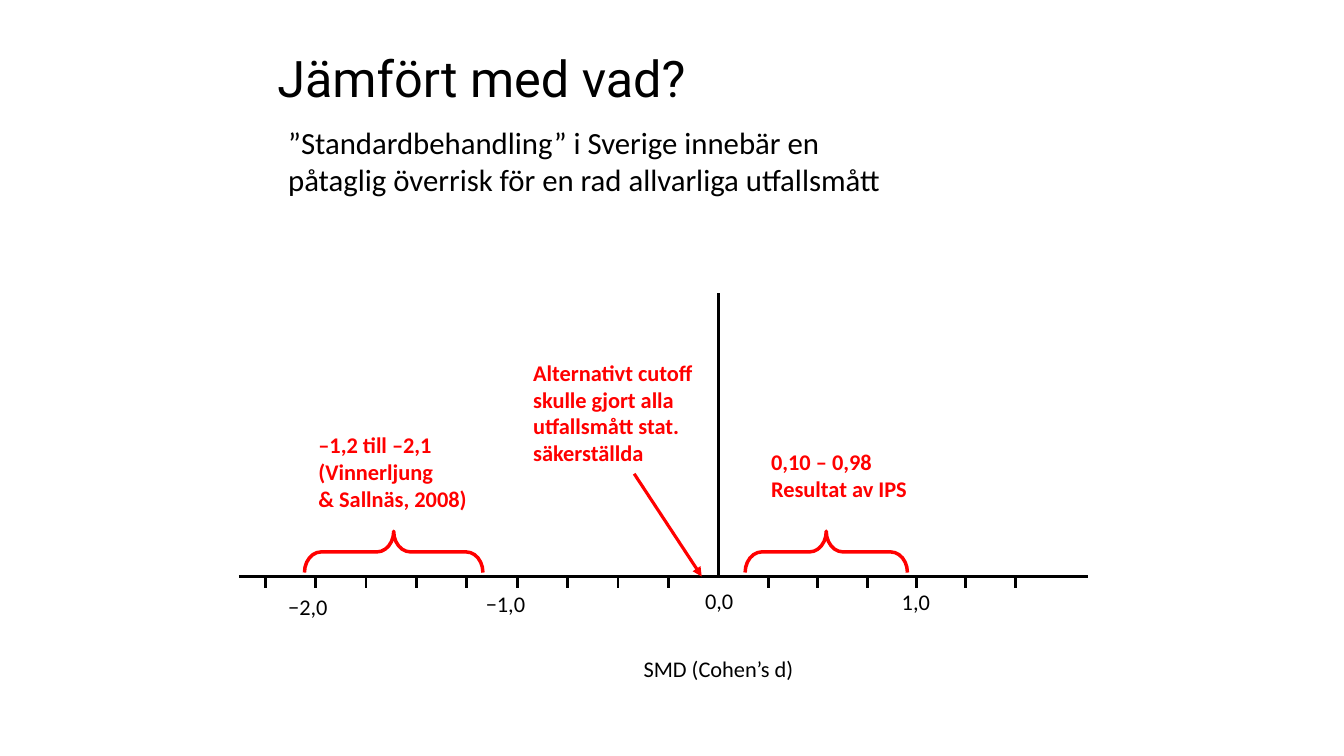
from pptx import Presentation
from pptx.dml.color import RGBColor
from pptx.enum.shapes import MSO_CONNECTOR, MSO_SHAPE
from pptx.enum.text import MSO_ANCHOR, MSO_AUTO_SIZE, PP_ALIGN
from pptx.oxml.ns import qn
from pptx.util import Inches, Pt
from lxml.etree import SubElement

BLACK, RED = "000000", "FF0000"
COLUMNS, ROWS = 133.3, 75


def cells(*counts):
    """Turn counts of tenth-inch grid cells into lengths."""
    return [Inches(count / 10) for count in counts]


def color(value):
    """Turn a hex string into a colour."""
    return RGBColor.from_string(value)


def write(frame, text, size=16, font="Calibri", ink=BLACK, bold=False,
          spacing=None, after=0):
    """Fill a text frame with one paragraph for each line of text."""
    for index, line in enumerate(text.split("\n")):
        para = frame.paragraphs[0] if index == 0 else frame.add_paragraph()
        para.alignment = PP_ALIGN.LEFT
        para.line_spacing = spacing
        para.space_after = Pt(after)
        span = para.add_run()
        span.text = line
        span.font.size = Pt(size)
        span.font.name = font
        span.font.bold = bold
        span.font.color.rgb = color(ink)


def add_text(page, box, text, wrap=True, **style):
    """Add a text box at a grid box."""
    frame = page.shapes.add_textbox(*cells(*box)).text_frame
    frame.word_wrap = wrap
    frame.auto_size = MSO_AUTO_SIZE.SHAPE_TO_FIT_TEXT
    write(frame, text, **style)


def add_line(page, start, end, ink=BLACK, width=2, arrow=False):
    """Draw a straight line between two grid points."""
    line = page.shapes.add_connector(MSO_CONNECTOR.STRAIGHT, *cells(*start, *end))
    line.line.color.rgb = color(ink)
    line.line.width = Pt(width)
    properties = line._element.spPr
    if arrow:
        SubElement(properties.find(qn("a:ln")), qn("a:tailEnd"), type="triangle")
    SubElement(properties, qn("a:effectLst"))


def add_brace(page, box):
    """Draw a brace that spans the grid box and points up."""
    left, top, width, height = box
    upright = (left + (width - height) / 2, top + (height - width) / 2, height, width)
    brace = page.shapes.add_shape(MSO_SHAPE.RIGHT_BRACE, *cells(*upright))
    brace.rotation = 270
    brace.adjustments[0] = 0.405
    brace.adjustments[1] = 0.5
    brace.fill.background()
    brace.line.color.rgb = color(RED)
    brace.line.width = Pt(2.5)
    brace.shadow.inherit = False


def add_heading(page, box):
    """Place the title and the statement below it."""
    left, top, width, height = box
    title = page.shapes.title
    title.left, title.top, title.width, title.height = cells(left, top, width, 7.4)
    frame = title.text_frame
    frame.margin_left = frame.margin_right = Inches(0.05)
    frame.margin_top = frame.margin_bottom = Inches(0.05)
    frame.vertical_anchor = MSO_ANCHOR.MIDDLE
    write(frame, "Jämfört med vad?", size=36, font="Roboto", spacing=0.8)
    add_text(page, (left + 0.6, top + 7.3, 61.9, height - 7.3),
             "”Standardbehandling” i Sverige innebär en påtaglig överrisk "
             "för en rad allvarliga utfallsmått", size=22, after=6)


def add_axis(page, box):
    """Draw the effect size axis with its ticks and labels."""
    left, top, width, height = box
    zero, base = left + 47.6, top + height
    add_line(page, (left, base), (left + width, base))
    add_line(page, (zero, base), (zero, top))
    for step in range(-9, 7):
        if step:
            tick = zero + step * (5 if step < 0 else 4.9)
            add_line(page, (tick, base + 1.1), (tick, base))
    labels = [("−2,0", -40.7, 1.2, 6), ("−1,0", -21.1, 0.9, 6),
              ("0,0", 0.1, 0.6, 4.9), ("1,0", 19.6, 0.7, 4.9),
              ("SMD (Cohen’s d)", 0.1, 7.3, 17.1)]
    for text, center, drop, span in labels:
        add_text(page, (zero + center - span / 2, base + drop, span, 3.7),
                 text, wrap=False)


def add_findings(page, box):
    """Add the red notes with their braces and arrow above the axis."""
    left, top, width, height = box
    base = top + height
    notes = [("–1,2 till –2,1\n(Vinnerljung\n& Sallnäs, 2008)", 0.4, 7.2, 17.7, 9.1),
             ("0,10 – 0,98\nResultat av IPS", 45.3, 8.9, 19.6, 6.4),
             ("Alternativt cutoff skulle gjort alla utfallsmått stat. "
              "säkerställda", 21.7, 0, 19.6, 11.8)]
    for text, across, down, span, depth in notes:
        add_text(page, (left + across, top + down, span, depth), text,
                 ink=RED, bold=True)
    add_line(page, (left + 32.7, top + 11.9), (left + 39.4, base),
             ink=RED, width=2.25, arrow=True)
    for across, span in [(0, 17.7), (43.7, 16.1)]:
        add_brace(page, (left + across, base - 4.5, span, 4.1))


def main():
    """Build the slide and save the deck."""
    deck = Presentation()
    deck.slide_width, deck.slide_height = cells(COLUMNS, ROWS)
    page = deck.slides.add_slide(deck.slide_layouts[5])
    add_heading(page, (27, 4.5, 80.3, 15.7))
    add_axis(page, (23.7, 29.1, 84.2, 28.1))
    add_findings(page, (30.2, 35.1, 64.9, 22.1))
    deck.save("out.pptx")


if __name__ == "__main__":
    main()
